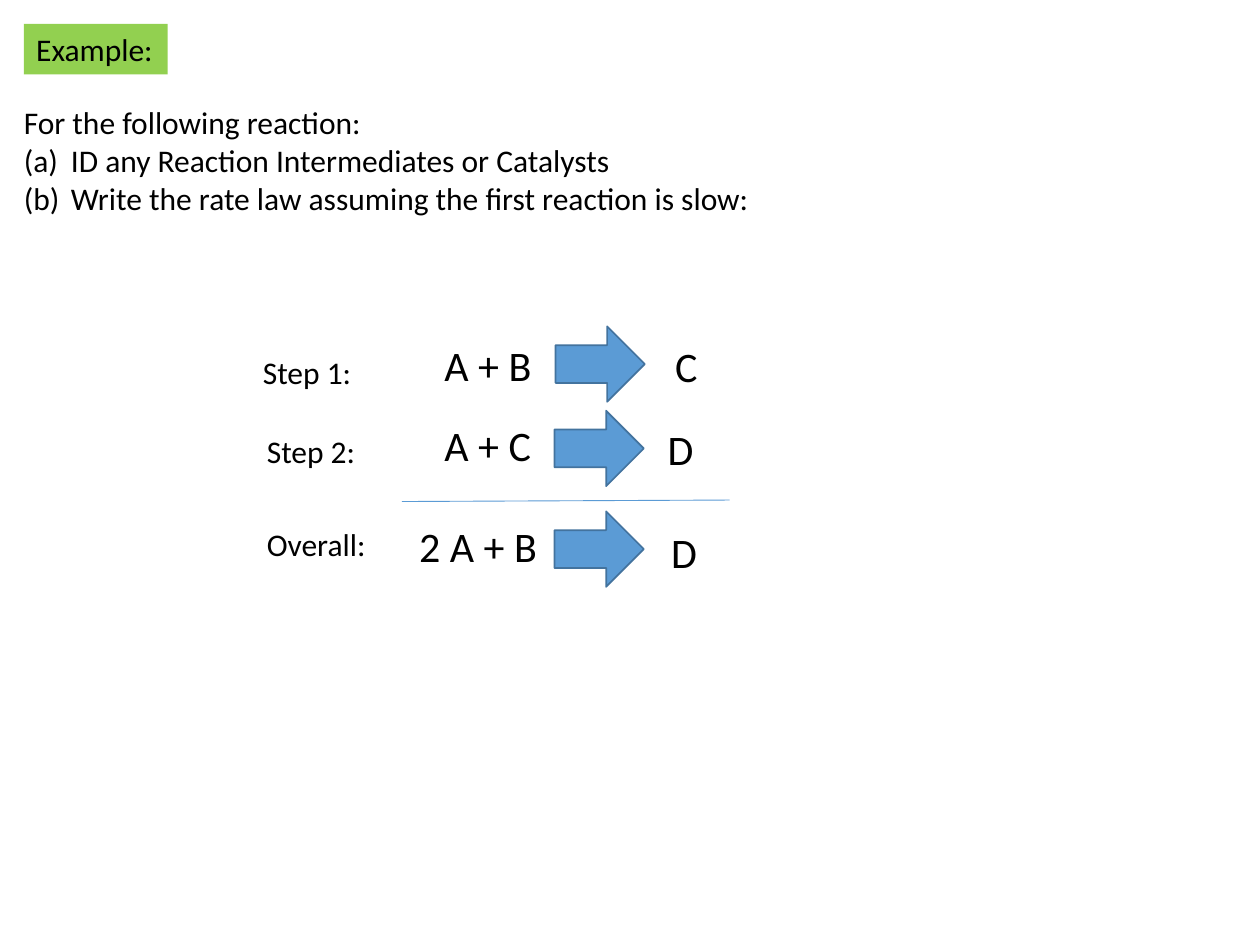
from dataclasses import dataclass

from lxml.etree import SubElement
from pptx import Presentation
from pptx.dml.color import RGBColor
from pptx.enum.shapes import MSO_CONNECTOR as Connector, MSO_SHAPE as Shape
from pptx.enum.text import MSO_ANCHOR as Anchor, MSO_AUTO_SIZE as AutoSize, PP_ALIGN as Align
from pptx.oxml.ns import qn
from pptx.util import Cm, Pt


@dataclass(frozen=True)
class Theme:
    """Colours, font and type sizes of the slide."""
    font: str = "Calibri"
    text: RGBColor = RGBColor(0x00, 0x00, 0x00)
    tag: RGBColor = RGBColor(0x92, 0xD0, 0x50)
    arrow: RGBColor = RGBColor(0x5B, 0x9B, 0xD5)
    outline: RGBColor = RGBColor(0x43, 0x73, 0x9E)
    body: Pt = Pt(18)
    formula: Pt = Pt(24)


THEME = Theme()
FRAME_FORMAT = {"word_wrap": False, "auto_size": AutoSize.SHAPE_TO_FIT_TEXT,
                "vertical_anchor": Anchor.TOP}
QUESTION = ["For the following reaction:",
            "ID any Reaction Intermediates or Catalysts",
            "Write the rate law assuming the first reaction is slow:"]
LABELS = [("Step 1:", 5.05, 6.99, 2.31),
          ("Step 2:", 5.13, 8.59, 2.31),
          ("Overall:", 5.13, 10.46, 2.51)]
FORMULAS = [("A + B", 8.71, 6.71, 2.46), ("C", 13.36, 6.73, 0.97),
            ("A + C", 8.71, 8.33, 2.26), ("D", 13.21, 8.41, 1.04),
            ("2 A + B", 8.2, 10.36, 2.9), ("D", 13.28, 10.49, 1.04)]
ARROWS = [(11.2, 6.58), (11.18, 8.28), (11.18, 10.31)]


def apply_format(target, values):
    """Set each named attribute on the target."""
    for name, value in values.items():
        setattr(target, name, value)


def write_lines(shape, lines, size):
    """Fill a shape with left-aligned paragraphs."""
    frame = shape.text_frame
    frame.text = "\n".join(lines)
    apply_format(frame, FRAME_FORMAT)
    for paragraph in frame.paragraphs:
        paragraph.alignment = Align.LEFT
        apply_format(paragraph.runs[0].font, {"name": THEME.font, "size": size})
        paragraph.runs[0].font.color.rgb = THEME.text


def add_text(shapes, lines, box, size):
    """Add a text box and return it."""
    shape = shapes.add_textbox(*map(Cm, box))
    write_lines(shape, lines, size)
    return shape


def add_filled(shapes, kind, box, fill):
    """Add a preset shape with a solid fill and no line."""
    shape = shapes.add_shape(kind, *map(Cm, box))
    shape.shadow.inherit = False
    shape.fill.solid()
    shape.fill.fore_color.rgb = fill
    shape.line.fill.background()
    return shape


def add_tag(shapes, text, box):
    """Add the coloured heading tag."""
    write_lines(add_filled(shapes, Shape.RECTANGLE, box, THEME.tag), [text], THEME.body)


def add_arrow(shapes, left, top):
    """Add an outlined reaction arrow."""
    arrow = add_filled(shapes, Shape.RIGHT_ARROW, (left, top, 1.8, 1.52), THEME.arrow)
    arrow.line.color.rgb = THEME.outline
    arrow.line.width = Pt(1)


def add_rule(shapes, ends):
    """Add the thin sum line above the overall reaction."""
    rule = shapes.add_connector(Connector.STRAIGHT, *map(Cm, ends))
    rule.line.color.rgb = THEME.arrow
    rule.line.width = Pt(0.5)
    SubElement(rule._element.spPr, qn("a:effectLst"))


def number_paragraph(paragraph):
    """Give a paragraph automatic (a), (b) numbering with a hanging indent."""
    properties = paragraph._p.get_or_add_pPr()
    properties.set("marL", str(Cm(0.95)))
    properties.set("indent", str(Cm(-0.95)))
    SubElement(properties, qn("a:buFont"), typeface="+mj-lt")
    SubElement(properties, qn("a:buAutoNum"), type="alphaLcParenBoth")


def add_reactions(shapes):
    """Add the group of formulas, arrows and sum line."""
    group = shapes.add_group_shape().shapes
    for left, top in ARROWS:
        add_arrow(group, left, top)
    for text, left, top, width in FORMULAS:
        add_text(group, [text], (left, top, width, 1.27), THEME.formula)
    add_rule(group, (8.1, 10.11, 14.71, 10.08))


def main():
    """Build and save the slide."""
    presentation = Presentation()
    apply_format(presentation, {"slide_width": Cm(25.4), "slide_height": Cm(19.05)})
    shapes = presentation.slides.add_slide(presentation.slide_layouts[6]).shapes
    add_tag(shapes, "Example:", (0.48, 0.48, 2.9, 1.02))
    add_reactions(shapes)
    question = add_text(shapes, QUESTION, (0.23, 1.96, 15.32, 2.57), THEME.body)
    for paragraph in question.text_frame.paragraphs[1:]:
        number_paragraph(paragraph)
    for text, left, top, width in LABELS:
        add_text(shapes, [text], (left, top, width, 1.02), THEME.body)
    presentation.save("out.pptx")


if __name__ == "__main__":
    main()
